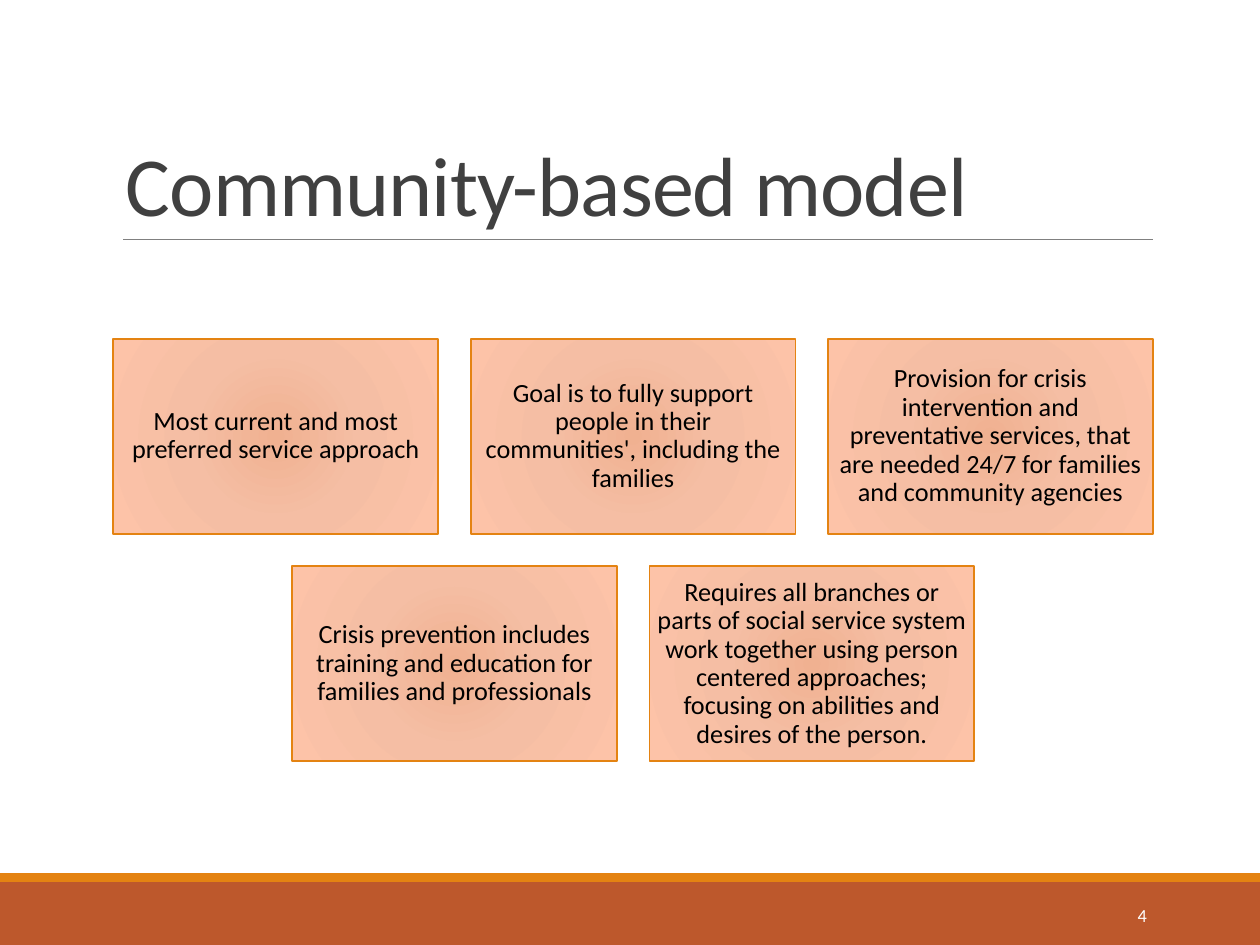
from lxml import etree
from pptx import Presentation
from pptx.dml.color import RGBColor
from pptx.enum import shapes, text
from pptx.oxml import parse_xml
from pptx.oxml.ns import nsdecls, qn
from pptx.util import Pt

WIDE, HIGH = 720, 540
LEFT, TOP = 64.8, 193.6
BOX_W, BOX_H, GAP = 185.6, 111.4, 18.6
ROWS = [
    ["Most current and most preferred service approach",
     "Goal is to fully support people in their communities', including the families",
     "Provision for crisis intervention and preventative services, that are needed "
     "24/7 for families and community agencies"],
    ["Crisis prevention includes training and education for families and professionals",
     "Requires all branches or parts of social service system work together using "
     "person centered approaches; focusing on abilities and desires of the person."],
]
STOPS = [(0, "F0B191"), (45, "F5BEA4"), (100, "FDC3A8")]


def color(code):
    return RGBColor.from_string(code)


def rect(slide, x, y, w, h):
    shape = slide.shapes.add_shape(
        shapes.MSO_SHAPE.RECTANGLE, Pt(x), Pt(y), Pt(w), Pt(h))
    shape.shadow.inherit = False
    return shape


def band(slide, y, h, code):
    shape = rect(slide, 0, y, WIDE, h)
    shape.fill.solid()
    shape.fill.fore_color.rgb = color(code)
    shape.line.fill.background()


def glow(shape):
    """Fill a shape with a gradient that spreads in circles from its centre."""
    stops = "".join(f'<a:gs pos="{pos * 1000}"><a:srgbClr val="{code}"/></a:gs>'
                    for pos, code in STOPS)
    fill = parse_xml(
        f'<a:gradFill {nsdecls("a")} rotWithShape="1"><a:gsLst>{stops}</a:gsLst>'
        '<a:path path="circle"><a:fillToRect l="50000" t="50000" r="50000" b="50000"/>'
        '</a:path></a:gradFill>')
    shape.element.spPr.find(qn("a:prstGeom")).addnext(fill)


def write(shape, words, size, code, align, anchor, inset=None):
    frame = shape.text_frame
    frame.word_wrap = True
    frame.vertical_anchor = anchor
    if inset is not None:
        frame.margin_left = frame.margin_right = Pt(inset)
        frame.margin_top = frame.margin_bottom = Pt(inset)
    para = frame.paragraphs[0]
    para.text = words
    para.alignment = align
    para.font.name = "Calibri"
    para.font.size = Pt(size)
    para.font.color.rgb = color(code)
    return para


def label(slide, x, y, w, h, *style):
    box = slide.shapes.add_textbox(Pt(x), Pt(y), Pt(w), Pt(h))
    return write(box, *style)


def rule(slide, x, y, end):
    line = slide.shapes.add_connector(
        shapes.MSO_CONNECTOR.STRAIGHT, Pt(x), Pt(y), Pt(end), Pt(y))
    line.line.color.rgb = color("808080")
    line.line.width = Pt(0.5)
    etree.SubElement(line.element.spPr, qn("a:effectLst"))


def card(slide, x, y, words):
    shape = rect(slide, x, y, BOX_W, BOX_H)
    glow(shape)
    shape.line.color.rgb = color("E48312")
    shape.line.width = Pt(1)
    para = write(shape, words, 15, "000000", text.PP_ALIGN.CENTER,
                 text.MSO_ANCHOR.MIDDLE, 4.5)
    para.line_spacing = 0.9


def cards(slide):
    """Lay out the rows of cards, each row centred under the widest one."""
    most = max(len(row) for row in ROWS)
    for i, row in enumerate(ROWS):
        start = LEFT + (most - len(row)) * (BOX_W + GAP) / 2
        for j, words in enumerate(row):
            card(slide, start + j * (BOX_W + GAP), TOP + i * (BOX_H + GAP), words)


def main():
    deck = Presentation()
    deck.slide_width, deck.slide_height = Pt(WIDE), Pt(HIGH)
    slide = deck.slides.add_slide(deck.slide_layouts[6])
    band(slide, 504, 36, "BD582C")
    band(slide, 499, 5, "E48312")
    rule(slide, 70.4, 136.8, 658.8)
    title = label(slide, LEFT, 22.5, 594, 114.3, "Community-based model", 48,
                  "404040", text.PP_ALIGN.LEFT, text.MSO_ANCHOR.BOTTOM)
    title.line_spacing = 0.85
    title.runs[0].font.size = Pt(48)
    title.runs[0].font._element.set("spc", "-50")
    label(slide, 584.6, 508.5, 77.8, 28.8, "4", 10.5, "FFFFFF",
          text.PP_ALIGN.RIGHT, text.MSO_ANCHOR.MIDDLE)
    cards(slide)
    deck.save("out.pptx")


if __name__ == "__main__":
    main()
